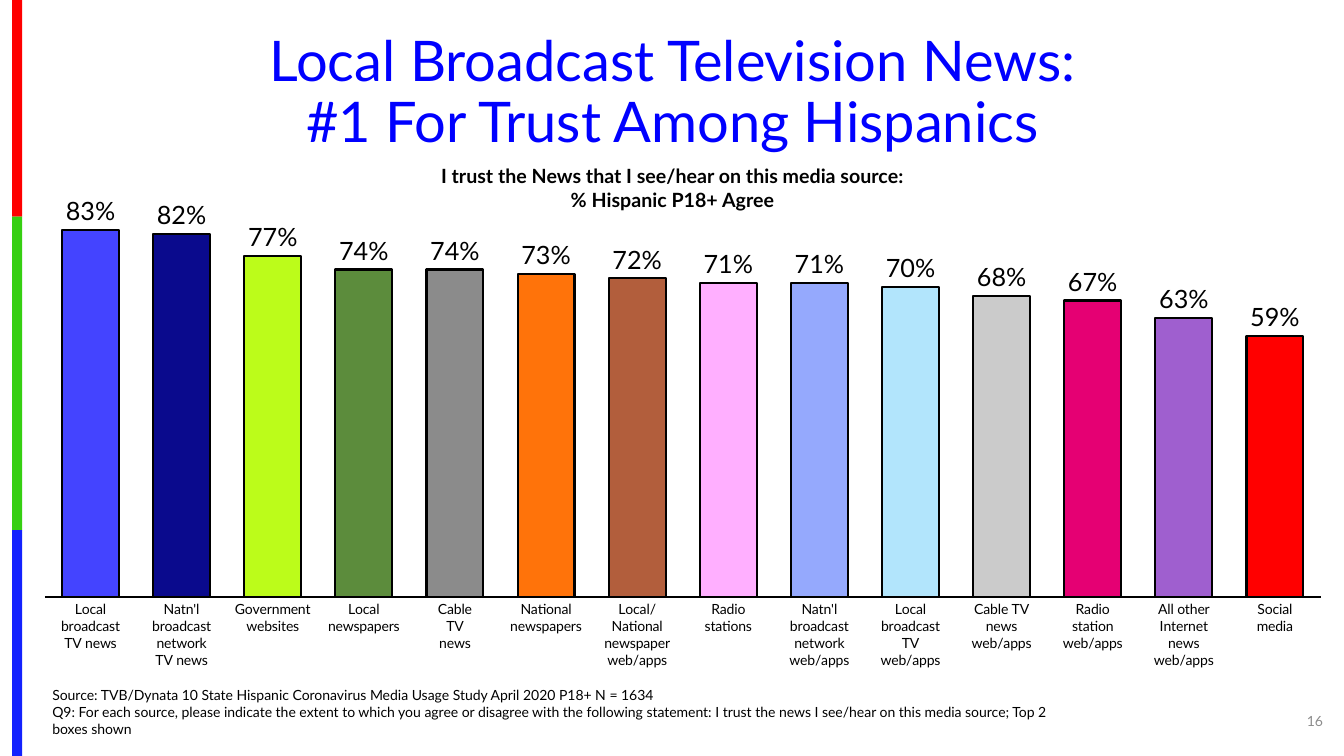
from lxml import etree
from pptx import Presentation
from pptx.chart.data import CategoryChartData
from pptx.dml.color import RGBColor
from pptx.enum.chart import XL_CHART_TYPE as Kind, XL_LABEL_POSITION as Spot
from pptx.enum.chart import XL_TICK_MARK as Tick
from pptx.enum.shapes import MSO_SHAPE as Shape
from pptx.enum.text import MSO_ANCHOR as Anchor, PP_ALIGN as Align
from pptx.oxml.ns import qn
from pptx.util import Inches, Pt

FACE = "Lato"
BLACK = RGBColor(0x00, 0x00, 0x00)
BLUE = RGBColor(0x00, 0x00, 0xFF)
GRAY = RGBColor(0x8C, 0x8C, 0x8C)

# Colour and height of each part of the left stripe, top to bottom
STRIPE = [
    (RGBColor(0xFE, 0x00, 0x00), 2.15),
    (RGBColor(0x36, 0xCF, 0x12), 3.11),
    (RGBColor(0x13, 0x22, 0xFE), 2.24),
]

# Media source, share who agree, bar colour
MEDIA = [
    ("Local\nbroadcast\nTV news", 0.83, RGBColor(0x44, 0x44, 0xFF)),
    ("Natn'l\nbroadcast\nnetwork\nTV news", 0.82, RGBColor(0x0A, 0x0A, 0x8D)),
    ("Government\nwebsites", 0.77, RGBColor(0xBC, 0xFC, 0x1A)),
    ("Local\nnewspapers", 0.74, RGBColor(0x5C, 0x8C, 0x3C)),
    ("Cable\nTV\nnews", 0.74, RGBColor(0x8B, 0x8B, 0x8B)),
    ("National\nnewspapers", 0.73, RGBColor(0xFF, 0x73, 0x0A)),
    ("Local/National\nnewspaper\nweb/apps", 0.72, RGBColor(0xB2, 0x5E, 0x3C)),
    ("Radio\nstations", 0.71, RGBColor(0xFF, 0xAF, 0xFF)),
    ("Natn'l\nbroadcast\nnetwork\nweb/apps", 0.71, RGBColor(0x95, 0xA9, 0xFD)),
    ("Local\nbroadcast\nTV\nweb/apps", 0.70, RGBColor(0xB2, 0xE5, 0xFC)),
    ("Cable TV\nnews\nweb/apps", 0.68, RGBColor(0xCB, 0xCB, 0xCB)),
    ("Radio\nstation\nweb/apps", 0.67, RGBColor(0xE5, 0x00, 0x73)),
    ("All other\nInternet\nnews\nweb/apps", 0.63, RGBColor(0x9F, 0x5F, 0xCF)),
    ("Social\nmedia", 0.59, RGBColor(0xFF, 0x00, 0x00)),
]
PLOT = {"x": 0.009, "y": 0.032, "w": 0.98, "h": 0.786}

# Words, box (left, top, width, height), alignment, anchor, line spacing, font
TEXTS = [
    ("Local Broadcast Television News:\n#1 For Trust Among Hispanics",
     (0.42, 0.28, 12.5, 1.31), Align.CENTER, Anchor.TOP, 0.9,
     {"size": Pt(40), "color": BLUE}),
    ("I trust the News that I see/hear on this media source:\n"
     "% Hispanic P18+ Agree",
     (1.88, 1.58, 9.58, 0.57), Align.CENTER, Anchor.TOP, 1.0,
     {"size": Pt(14), "color": BLACK, "bold": True}),
    ("Source: TVB/Dynata 10 State Hispanic Coronavirus Media Usage Study "
     "April 2020 P18+ N = 1634\n"
     "Q9: For each source, please indicate the extent to which you agree or "
     "disagree with the following statement: I trust the news I see/hear on "
     "this media source; Top 2 boxes shown",
     (0.42, 6.75, 10.08, 0.61), Align.LEFT, Anchor.BOTTOM, 1.0,
     {"size": Pt(10), "color": BLACK}),
    ("16", (12.62, 6.95, 0.6, 0.4), Align.RIGHT, Anchor.MIDDLE, 1.0,
     {"size": Pt(10), "color": GRAY}),
]


def style(font, form):
    for key, val in {"name": FACE, **form}.items():
        if key == "color":
            font.color.rgb = val
        else:
            setattr(font, key, val)


def ink(line):
    line.color.rgb = BLACK
    line.width = Pt(1.5)


def add_stripe(slide):
    top = 0
    for color, tall in STRIPE:
        bar = slide.shapes.add_shape(
            Shape.RECTANGLE, Inches(0.12), Inches(top), Inches(0.1), Inches(tall))
        bar.shadow.inherit = False
        bar.fill.solid()
        bar.fill.fore_color.rgb = color
        bar.line.fill.background()
        top += tall


def add_text(slide, words, box, align, anchor, space, form):
    frame = slide.shapes.add_textbox(*map(Inches, box)).text_frame
    frame.word_wrap = True
    frame.vertical_anchor = anchor
    para = frame.paragraphs[0]
    para.text = words
    para.alignment = align
    para.line_spacing = space
    for run in para.runs:
        style(run.font, form)


def place_plot(chart):
    """Fix the inner plot area at the PLOT fractions of the chart."""
    area = chart._chartSpace.chart.plotArea
    for old in area.findall(qn("c:layout")):
        area.remove(old)
    layout = etree.Element(qn("c:layout"))
    area.insert(0, layout)
    manual = etree.SubElement(layout, qn("c:manualLayout"))
    parts = {"layoutTarget": "inner", "xMode": "edge", "yMode": "edge", **PLOT}
    for tag, val in parts.items():
        etree.SubElement(manual, qn("c:" + tag)).set("val", str(val))


def add_bars(slide):
    names, shares, colors = zip(*MEDIA)
    data = CategoryChartData(number_format="0%")
    data.categories = names
    data.add_series("Series 1", shares)
    box = map(Inches, (0.33, 1.81, 12.91, 5.03))
    chart = slide.shapes.add_chart(Kind.COLUMN_CLUSTERED, *box, data).chart
    chart.has_legend = chart.has_title = False
    style(chart.font, {"size": Pt(10), "color": BLACK})
    place_plot(chart)

    scale = chart.value_axis
    scale.minimum_scale, scale.maximum_scale = 0, 0.9
    scale.has_major_gridlines = False
    scale.visible = False
    base = chart.category_axis
    base.major_tick_mark = base.minor_tick_mark = Tick.NONE
    style(base.tick_labels.font, {"size": Pt(10), "color": BLACK})
    ink(base.format.line)

    plot = chart.plots[0]
    plot.gap_width = 60
    plot.vary_by_categories = False
    bars = plot.series[0]
    for i, color in enumerate(colors):
        look = bars.points[i].format
        look.fill.solid()
        look.fill.fore_color.rgb = color
        ink(look.line)
    labels = bars.data_labels
    labels.show_value = True
    labels.number_format = "0%"
    labels.number_format_is_linked = False
    labels.position = Spot.OUTSIDE_END
    style(labels.font, {"size": Pt(18), "color": BLACK})


def main():
    deck = Presentation()
    deck.slide_width, deck.slide_height = Inches(13.33), Inches(7.5)
    slide = deck.slides.add_slide(deck.slide_layouts[6])
    add_stripe(slide)
    add_bars(slide)
    for text in TEXTS:
        add_text(slide, *text)
    deck.save("out.pptx")


if __name__ == "__main__":
    main()
